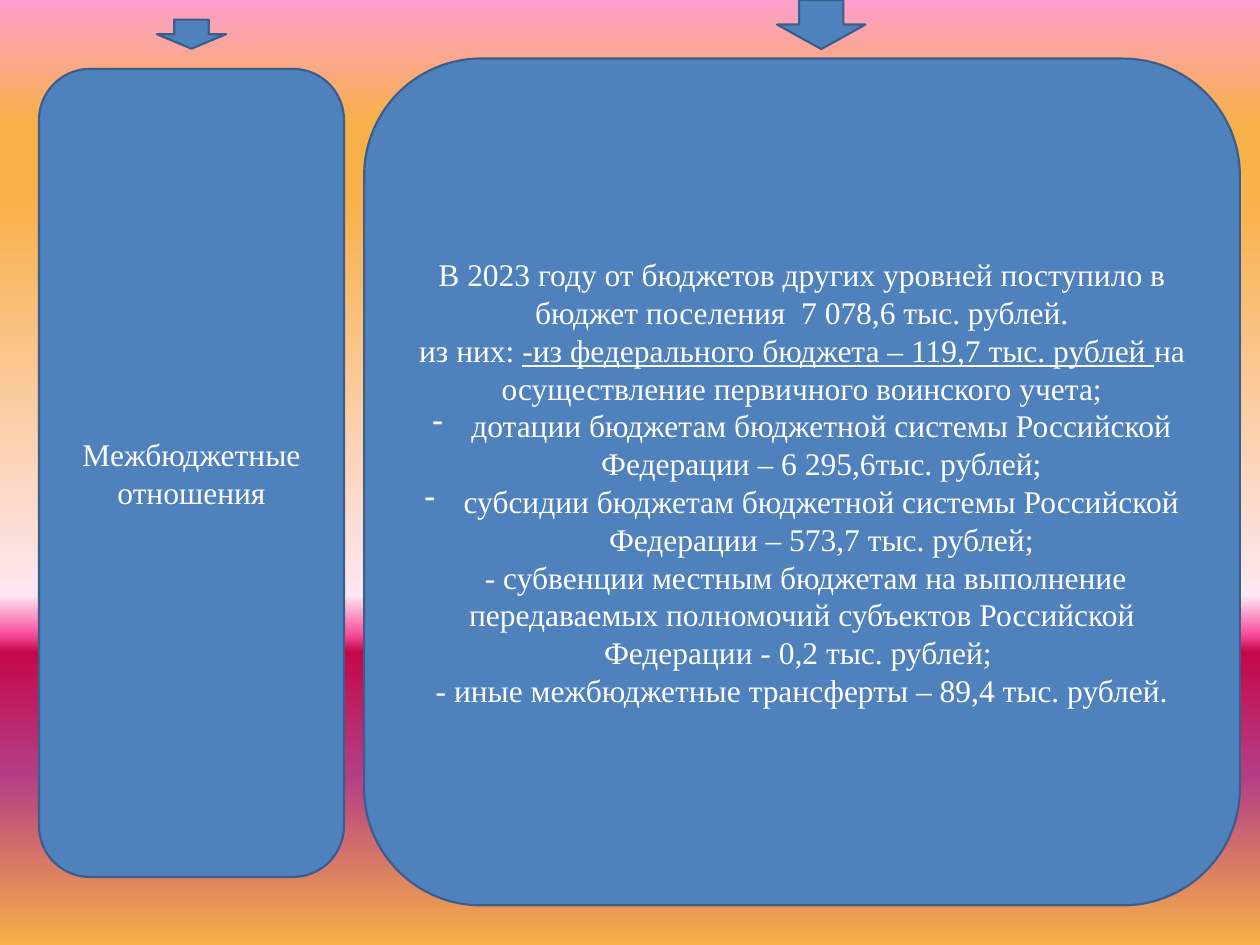
from lxml.etree import SubElement
from pptx import Presentation
from pptx.dml.color import RGBColor
from pptx.enum.shapes import MSO_SHAPE as Shape
from pptx.enum.text import MSO_ANCHOR as Anchor, PP_ALIGN as Align
from pptx.oxml.ns import qn
from pptx.util import Inches, Pt

WIDTH, HEIGHT = Inches(10), Inches(7.5)
BLUE = RGBColor(0x4F, 0x81, 0xBD)
OUTLINE = RGBColor(0x3A, 0x5F, 0x8C)
WHITE = RGBColor(0xFF, 0xFF, 0xFF)
SUNSET = [
    (0, RGBColor(0xFC, 0x9F, 0xCB)),
    (13, RGBColor(0xF8, 0xB0, 0x49)),
    (21, RGBColor(0xF8, 0xB0, 0x49)),
    (63, RGBColor(0xFE, 0xE7, 0xF2)),
    (67, RGBColor(0xF9, 0x52, 0xA0)),
    (69, RGBColor(0xC5, 0x08, 0x49)),
    (82, RGBColor(0xB4, 0x3E, 0x85)),
    (100, RGBColor(0xF8, 0xB0, 0x49)),
]
INDENT = Inches(0.31)

TOPIC = [(False, ["Межбюджетные отношения"])]
TRANSFERS = [
    (False, ["В 2023 году от бюджетов других уровней поступило в бюджет поселения  7 078,6 тыс. рублей."]),
    (False, ["из них: ", "-из федерального бюджета – 119,7 тыс. рублей ",
             "на осуществление первичного воинского учета;"]),
    (True, ["дотации бюджетам бюджетной системы Российской Федерации – 6 295,6тыс. рублей;"]),
    (True, ["субсидии бюджетам бюджетной системы Российской Федерации – 573,7 тыс. рублей;"]),
    (False, [" - субвенции местным бюджетам на выполнение передаваемых полномочий "
             "субъектов Российской Федерации - 0,2 тыс. рублей; "]),
    (False, ["- иные межбюджетные трансферты – 89,4 тыс. рублей."]),
]


def paint_background(page):
    fill = page.background.fill
    fill.gradient()
    fill.gradient_angle = 270
    stops = next(page.element.iter(qn("a:gsLst")))
    for stop in list(stops):
        stops.remove(stop)
    for percent, color in SUNSET:
        stop = SubElement(stops, qn("a:gs"), pos=str(percent * 1000))
        SubElement(stop, qn("a:srgbClr"), val=str(color))


def add_block(page, kind, box):
    left, top, width, height = box
    block = page.shapes.add_shape(kind, int(left), int(top), int(width), int(height))
    block.shadow.inherit = False
    block.fill.solid()
    block.fill.fore_color.rgb = BLUE
    block.line.color.rgb = OUTLINE
    block.line.width = Pt(1.25)
    return block


def add_dash(para):
    props = para._p.get_or_add_pPr()
    props.set("marL", str(INDENT))
    props.set("indent", str(-INDENT))
    SubElement(props, qn("a:buFontTx"))
    SubElement(props, qn("a:buChar"), char="-")


def write_paragraphs(frame, paragraphs):
    frame.word_wrap = True
    frame.vertical_anchor = Anchor.MIDDLE
    for index, (dashed, parts) in enumerate(paragraphs):
        para = frame.add_paragraph() if index else frame.paragraphs[0]
        para.alignment = Align.CENTER
        if dashed:
            add_dash(para)
        for part in parts:
            span = para.add_run()
            span.text = part
            span.font.name = "Times New Roman"
            span.font.size = Pt(18)
            span.font.color.rgb = WHITE
            span.font.underline = part.startswith("-из")


def add_panel(page, box, paragraphs, rounding, arrow):
    left, top, width, height = box
    panel = add_block(page, Shape.ROUNDED_RECTANGLE, box)
    panel.adjustments[0] = rounding
    write_paragraphs(panel.text_frame, paragraphs)
    center, rise, arrow_width, arrow_height = arrow
    add_block(page, Shape.DOWN_ARROW, (
        left + width * (center - arrow_width / 2), top - height * rise,
        width * arrow_width, height * arrow_height))


def share(left, top, width, height):
    return WIDTH * left, HEIGHT * top, WIDTH * width, HEIGHT * height


def main():
    deck = Presentation()
    deck.slide_width, deck.slide_height = WIDTH, HEIGHT
    page = deck.slides.add_slide(deck.slide_layouts[6])
    paint_background(page)
    add_panel(page, share(0.031, 0.073, 0.242, 0.855), TOPIC, 0.167,
              (0.5, 0.061, 0.227, 0.036))
    add_panel(page, share(0.289, 0.062, 0.695, 0.896), TRANSFERS, 0.138,
              (0.522, 0.0692, 0.101, 0.058))
    deck.save("out.pptx")


if __name__ == "__main__":
    main()
